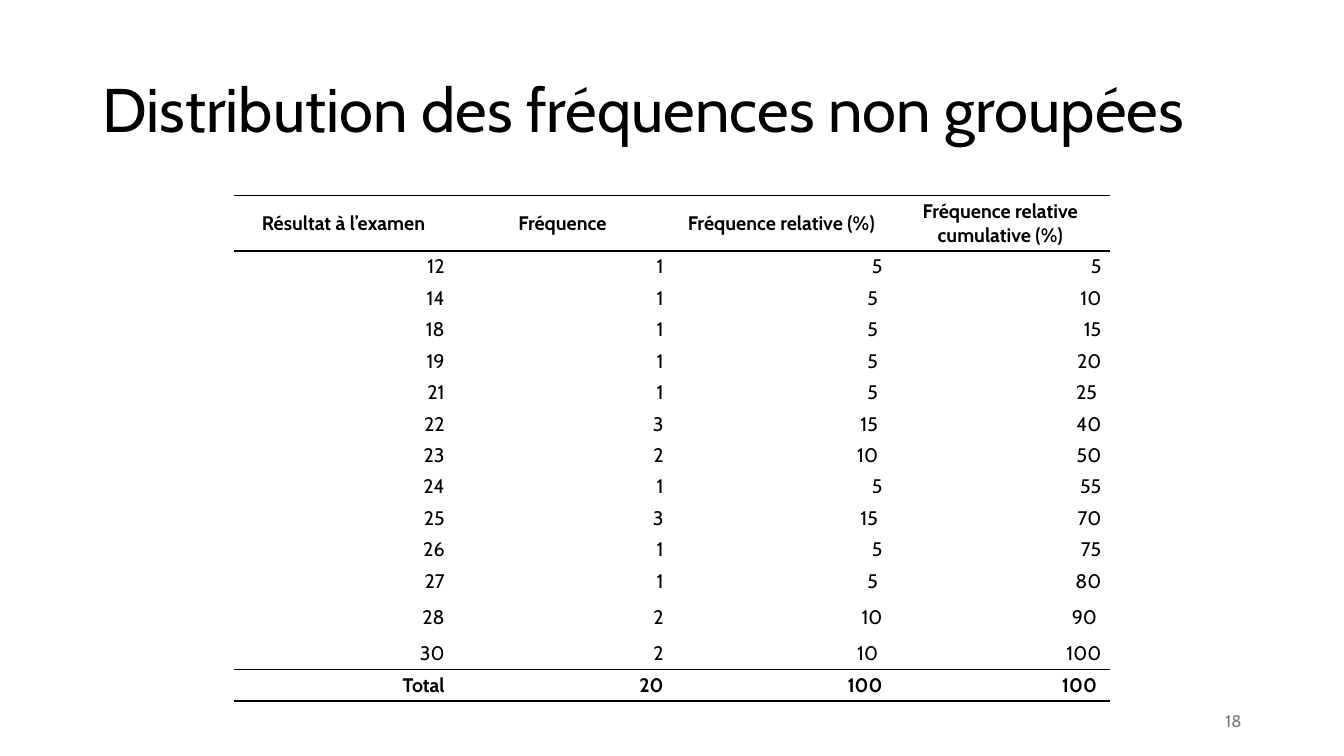
import pptx
import pptx.dml.color
import pptx.enum.text
import pptx.util
from lxml import etree

PX = 9525
NO_GRID_STYLE = "{2D5ABB26-0587-4C30-8999-92F81FD0307C}"
A = "http://schemas.openxmlformats.org/drawingml/2006/main"
COLORS = {"ink": "000000", "muted": "797979"}
ALIGN = pptx.enum.text.PP_ALIGN
MIDDLE = pptx.enum.text.MSO_ANCHOR.MIDDLE

HEADERS = [
    "Résultat à l’examen",
    "Fréquence",
    "Fréquence relative (%)",
    "Fréquence relative cumulative (%)",
]
RESULTS = [
    ("12", "1", "5", "5"),
    ("14", "1", "5 ", "10"),
    ("18", "1", "5 ", "15"),
    ("19", "1", "5 ", "20"),
    ("21", "1", "5 ", "25 "),
    ("22", "3", "15 ", "40"),
    ("23", "2", "10 ", "50"),
    ("24", "1", "5", "55"),
    ("25", "3", "15 ", "70"),
    ("26", "1", "5", "75"),
    ("27", "1", "5 ", "80"),
    ("28", "2", "10", "90 "),
    ("30", "2", "10 ", "100"),
]
TOTAL = ("Total", "20", "100", "100 ")
ROW_HEIGHTS = [53] + [30] * 11 + [39, 30, 30]


def px(n):
    return pptx.util.Emu(n * PX)


class SlideBuilder:
    """Holds the style and the current slide, and adds each kind of element."""

    def __init__(self, prs, font="Cabin"):
        self.font = font
        self.slide = prs.slides.add_slide(prs.slide_layouts[5])

    def fill_text(self, tf, text, size, align, color="ink", bold=False):
        p = tf.paragraphs[0]
        p.text = text
        p.alignment = align
        p.font.name = self.font
        p.font.size = pptx.util.Pt(size)
        p.font.bold = bold
        p.font.color.rgb = pptx.dml.color.RGBColor.from_string(COLORS[color])
        return p

    def title(self, text, box, size):
        sp = self.slide.shapes.title
        sp.left, sp.top, sp.width, sp.height = map(px, box)
        sp.text_frame.vertical_anchor = MIDDLE
        p = self.fill_text(sp.text_frame, text, size, ALIGN.LEFT)
        p.line_spacing = 0.9

    def text(self, text, box, size, align, color):
        tf = self.slide.shapes.add_textbox(*map(px, box)).text_frame
        tf.word_wrap = True
        tf.vertical_anchor = MIDDLE
        self.fill_text(tf, text, size, align, color)

    def rule(self, cell, side):
        tc_pr = cell._tc.get_or_add_tcPr()
        ln = etree.SubElement(tc_pr, f"{{{A}}}{side}", w=str(pptx.util.Pt(1)))
        fill = etree.SubElement(ln, f"{{{A}}}solidFill")
        etree.SubElement(fill, f"{{{A}}}srgbClr", val=COLORS["ink"])

    def table(self, rows, heights, box, size):
        frame = self.slide.shapes.add_table(len(rows), len(rows[0]), *map(px, box))
        table = frame.table
        table.first_row = table.horz_banding = False
        table._tbl.tblPr.find(f"{{{A}}}tableStyleId").text = NO_GRID_STYLE
        for i, (values, height) in enumerate(zip(rows, heights)):
            table.rows[i].height = px(height)
            ruled = i in (0, len(rows) - 1)
            align = ALIGN.RIGHT if i else ALIGN.CENTER
            for cell, value in zip(table.rows[i].cells, values):
                cell.margin_left = cell.margin_right = px(8)
                cell.margin_top = cell.margin_bottom = px(3)
                cell.vertical_anchor = MIDDLE
                if ruled:
                    self.rule(cell, "lnT")
                    self.rule(cell, "lnB")
                cell.fill.background()
                self.fill_text(cell.text_frame, value, size, align, bold=ruled)


def main():
    prs = pptx.Presentation()
    prs.slide_width, prs.slide_height = px(1280), px(720)
    s = SlideBuilder(prs)
    s.title("Distribution des fréquences non groupées", (88, 38, 1104, 139), 44)
    s.text("18", (904, 667, 288, 38), 12, ALIGN.RIGHT, "muted")
    rows = [HEADERS, *RESULTS, TOTAL]
    s.table(rows, ROW_HEIGHTS, (223, 186, 834, sum(ROW_HEIGHTS)), 14)
    prs.save("out.pptx")


if __name__ == "__main__":
    main()
